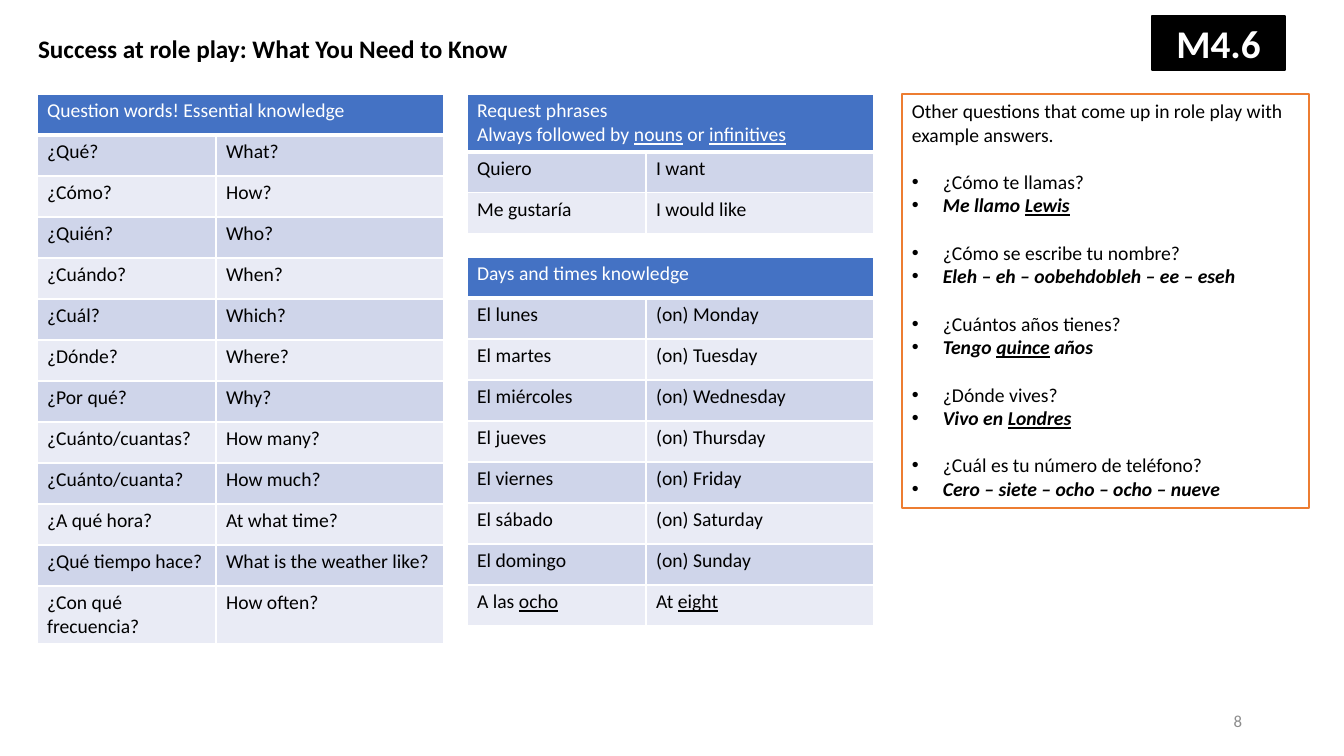
from lxml.etree import SubElement
from pptx import Presentation
from pptx.dml.color import RGBColor
from pptx.enum.shapes import MSO_SHAPE as Shape
from pptx.enum.text import MSO_ANCHOR as Anchor, MSO_AUTO_SIZE as AutoSize, PP_ALIGN as Align
from pptx.oxml import parse_xml
from pptx.oxml.ns import nsdecls, qn
from pptx.util import Pt

# Content: words between underscores are underlined
TITLE = "Success at role play: What You Need to Know"
BADGE = "M4.6"
SLIDE_NUMBER = "8"

QUESTION_WORDS = (["Question words! Essential knowledge"], [
    ("¿Qué?", "What?"),
    ("¿Cómo?", "How?"),
    ("¿Quién?", "Who?"),
    ("¿Cuándo?", "When?"),
    ("¿Cuál?", "Which?"),
    ("¿Dónde?", "Where?"),
    ("¿Por qué?", "Why?"),
    ("¿Cuánto/cuantas?", "How many?"),
    ("¿Cuánto/cuanta?", "How much?"),
    ("¿A qué hora?", "At what time?"),
    ("¿Qué tiempo hace?", "What is the weather like?"),
    ("¿Con qué frecuencia?", "How often?"),
])
REQUEST_PHRASES = (["Request phrases", "Always followed by _nouns_ or _infinitives_"], [
    ("Quiero", "I want"),
    ("Me gustaría", "I would like"),
])
DAYS_AND_TIMES = (["Days and times knowledge"], [
    ("El lunes", "(on) Monday"),
    ("El martes", "(on) Tuesday"),
    ("El miércoles", "(on) Wednesday"),
    ("El jueves", "(on) Thursday"),
    ("El viernes", "(on) Friday"),
    ("El sábado", "(on) Saturday"),
    ("El domingo", "(on) Sunday"),
    ("A las _ocho_", "At _eight_"),
])
OTHER_INTRO = "Other questions that come up in role play with example answers."
OTHER_QUESTIONS = [
    ("¿Cómo te llamas?", "Me llamo _Lewis_"),
    ("¿Cómo se escribe tu nombre?", "Eleh – eh – oobehdobleh – ee – eseh"),
    ("¿Cuántos años tienes?", "Tengo _quince_ años"),
    ("¿Dónde vives?", "Vivo en _Londres_"),
    ("¿Cuál es tu número de teléfono?", "Cero – siete – ocho – ocho – nueve"),
]

# Layout in px
WIDTH, HEIGHT = 1344, 756
COLUMN_LEFTS = (37, 467, 902)
TOP, DAYS_TOP = 94, 257
TABLE_COLUMNS = (179, 228)
PANEL_WIDTH, PANEL_HEIGHT = sum(TABLE_COLUMNS), 414
ROW_HEIGHT = 41
INDENT = 31

BLACK, WHITE, GREY = "000000", "FFFFFF", "8C8C8C"
BLUE, ORANGE = "4472C4", "ED7D31"
BANDS = ("CFD5EA", "E9EBF5")


def px(length):
    return round(length * 914400 / 100.8)


def color(value):
    return RGBColor.from_string(value)


def write(paragraph, text, size=14, ink=BLACK, bold=False, italic=False, align=Align.LEFT):
    paragraph.alignment = align
    font = paragraph.font
    font.name, font.size, font.bold, font.italic = "Calibri", Pt(size), bold, italic
    font.color.rgb = color(ink)
    for index, part in enumerate(text.split("_")):
        if part:
            run = paragraph.add_run()
            run.text = part
            if index % 2:
                run.font.underline = True


def fill_cell(cell, lines, fill, ink=BLACK, bottom=1):
    cell.fill.solid()
    cell.fill.fore_color.rgb = color(fill)
    properties = cell._tc.get_or_add_tcPr()
    for index, (side, width) in enumerate(zip("LRTB", (1, 1, 1, bottom))):
        properties.insert(index, parse_xml(
            f'<a:ln{side} {nsdecls("a")} w="{Pt(width)}"><a:solidFill>'
            f'<a:srgbClr val="{WHITE}"/></a:solidFill></a:ln{side}>'))
    frame = cell.text_frame
    for index, line in enumerate(lines):
        write(frame.add_paragraph() if index else frame.paragraphs[0], line, ink=ink)


def add_vocabulary(slide, left, top, content):
    header, rows = content
    count = len(rows) + 1
    table = slide.shapes.add_table(count, 2, px(left), px(top), px(PANEL_WIDTH),
                                   px(count * ROW_HEIGHT)).table
    for column, width in zip(table.columns, TABLE_COLUMNS):
        column.width = px(width)
    for row in table.rows:
        row.height = px(ROW_HEIGHT)
    table.cell(0, 0).merge(table.cell(0, 1))
    fill_cell(table.cell(0, 0), header, BLUE, WHITE, bottom=3)
    for index, words in enumerate(rows):
        for column, text in enumerate(words):
            fill_cell(table.cell(index + 1, column), [text], BANDS[index % 2])


def add_box(slide, box, fill, line):
    shape = slide.shapes.add_shape(Shape.RECTANGLE, *map(px, box))
    shape.shadow.inherit = False
    shape.fill.solid()
    shape.fill.fore_color.rgb = color(fill)
    shape.line.color.rgb = color(line)
    shape.line.width = Pt(1)
    shape.text_frame.word_wrap = True
    return shape.text_frame


def add_bullet(paragraph):
    properties = paragraph._p.get_or_add_pPr()
    properties.set("marL", str(px(INDENT)))
    properties.set("indent", str(-px(INDENT)))
    font = SubElement(properties, qn("a:buFont"), typeface="Arial")
    bullet = SubElement(properties, qn("a:buChar"), char="•")
    defaults = properties.find(qn("a:defRPr"))
    defaults.addprevious(font)
    defaults.addprevious(bullet)


def main():
    presentation = Presentation()
    presentation.slide_width, presentation.slide_height = px(WIDTH), px(HEIGHT)
    slide = presentation.slides.add_slide(presentation.slide_layouts[5])

    # Title
    title = slide.shapes.title
    title.left, title.top, title.width, title.height = map(px, (28, 28, 1273, 40))
    frame = title.text_frame
    frame.auto_size, frame.vertical_anchor = AutoSize.NONE, Anchor.TOP
    write(frame.paragraphs[0], TITLE, 18, bold=True)

    # Vocabulary tables
    add_vocabulary(slide, COLUMN_LEFTS[0], TOP, QUESTION_WORDS)
    add_vocabulary(slide, COLUMN_LEFTS[1], TOP, REQUEST_PHRASES)
    add_vocabulary(slide, COLUMN_LEFTS[1], DAYS_TOP, DAYS_AND_TIMES)

    # Questions with example answers
    frame = add_box(slide, (COLUMN_LEFTS[2], TOP, PANEL_WIDTH, PANEL_HEIGHT), WHITE, ORANGE)
    frame.vertical_anchor = Anchor.TOP
    write(frame.paragraphs[0], OTHER_INTRO)
    for pair in OTHER_QUESTIONS:
        for is_answer, text in enumerate(pair):
            paragraph = frame.add_paragraph()
            paragraph.space_before = Pt(0 if is_answer else 17)
            write(paragraph, text, bold=bool(is_answer), italic=bool(is_answer))
            add_bullet(paragraph)

    # Badge
    frame = add_box(slide, (1152, 16, 133, 54), BLACK, BLACK)
    frame.vertical_anchor = Anchor.MIDDLE
    write(frame.paragraphs[0], BADGE, 28, WHITE, bold=True, align=Align.CENTER)

    # Slide number
    frame = slide.shapes.add_textbox(*map(px, (950, 701, 302, 40))).text_frame
    frame.word_wrap, frame.vertical_anchor = True, Anchor.MIDDLE
    write(frame.paragraphs[0], SLIDE_NUMBER, 12, GREY, align=Align.RIGHT)

    presentation.save("out.pptx")


if __name__ == "__main__":
    main()
